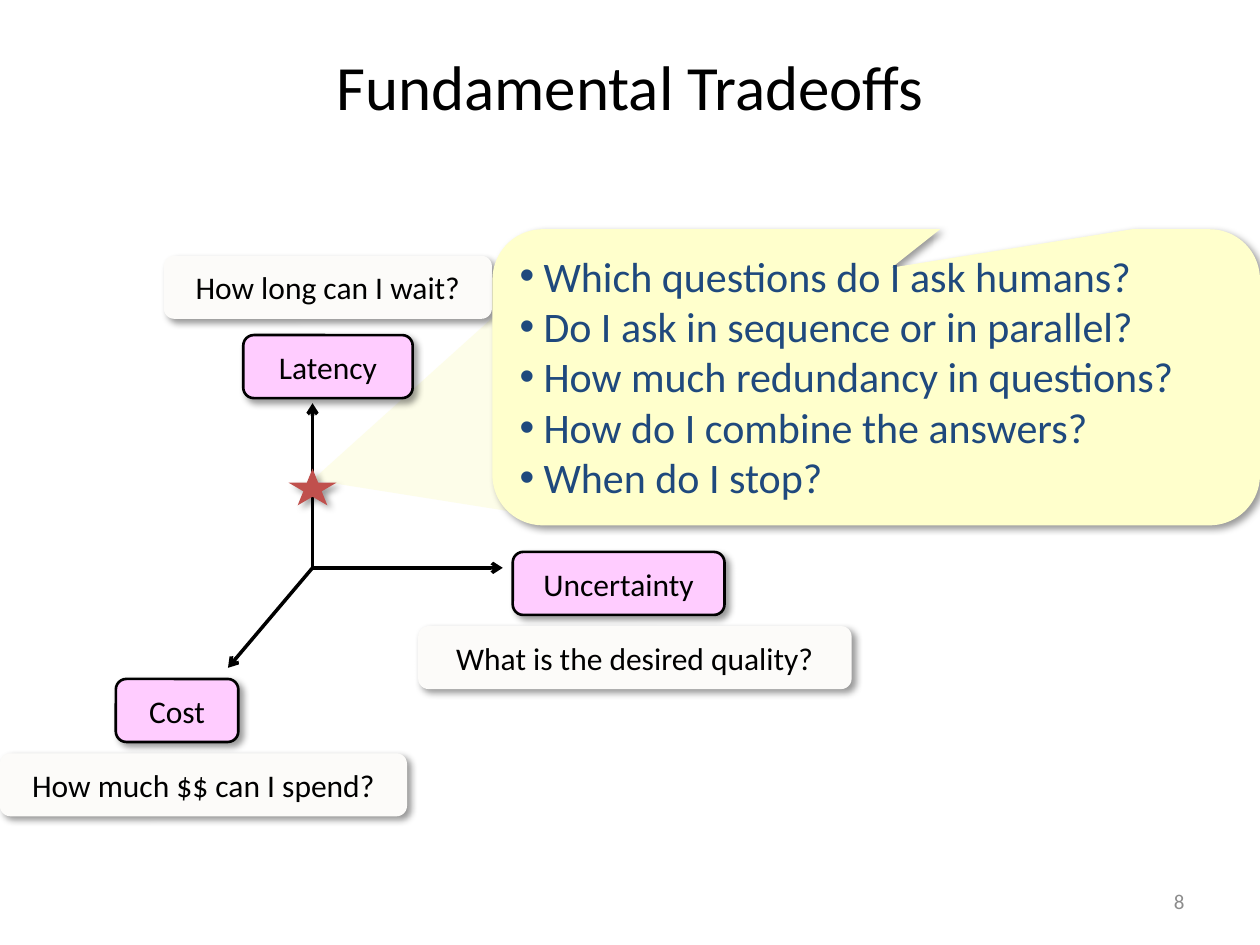
from dataclasses import dataclass
from typing import Optional

from lxml.etree import SubElement
from pptx import Presentation
from pptx.dml.color import RGBColor
from pptx.enum.shapes import MSO_CONNECTOR as Line, MSO_SHAPE as Shape
from pptx.enum.text import MSO_ANCHOR as Anchor, PP_ALIGN as Align
from pptx.oxml.ns import qn
from pptx.util import Pt


@dataclass(frozen=True)
class Theme:
    font: str = "Calibri"
    black: str = "000000"
    axis_name: str = "FFCCFF"
    question: str = "FCFBF9"
    star: str = "C0504D"
    callout: str = "FFFFCC"
    callout_text: str = "1F497D"
    beam: str = "FBFBD1"
    page_number: str = "8C8C8C"
    title_size: float = 36
    list_size: float = 24
    label_size: float = 18
    number_size: float = 12


@dataclass(frozen=True)
class Box:
    left: float
    top: float
    width: float
    height: float

    def lengths(self) -> tuple:
        return Pt(self.left), Pt(self.top), Pt(self.width), Pt(self.height)


@dataclass(frozen=True)
class Axis:
    name: str
    name_box: Box
    question: str
    question_box: Box
    tip: tuple[float, float]


THEME = Theme()
LABEL_HEIGHT = 36
ORIGIN = (178.6, 324.5)
AXES = [
    Axis("Latency", Box(139, 191.5, 96.8, LABEL_HEIGHT),
         "How long can I wait?", Box(93.6, 146.2, 187.5, LABEL_HEIGHT), (178.6, 230.4)),
    Axis("Cost", Box(66.2, 388, 70, LABEL_HEIGHT),
         "How much $$ can I spend?", Box(0, 430.5, 232.6, LABEL_HEIGHT), (130.3, 381.6)),
    Axis("Uncertainty", Box(293, 315.4, 121, LABEL_HEIGHT),
         "What is the desired quality?", Box(239, 357.8, 247.7, LABEL_HEIGHT), (287.3, 324.5)),
]
DECISIONS = [
    "Which questions do I ask humans?",
    "Do I ask in sequence or in parallel?",
    "How much redundancy in questions?",
    "How do I combine the answers?",
    "When do I stop?",
]


def write(frame, text: str, *, size: float, color: str = THEME.black,
          align: Align = Align.CENTER, anchor: Anchor = Anchor.MIDDLE,
          bullet_indent: float = 0) -> None:
    """Fill a text frame, one paragraph a line, bulleted if an indent is given."""
    frame.word_wrap = True
    frame.vertical_anchor = anchor
    for index, line in enumerate(text.split("\n")):
        para = frame.add_paragraph() if index else frame.paragraphs[0]
        para.alignment = align
        span = para.add_run()
        span.text = line
        span.font.name = THEME.font
        span.font.size = Pt(size)
        span.font.color.rgb = RGBColor.from_string(color)
        if bullet_indent:
            properties = para._p.get_or_add_pPr()
            properties.set("marL", str(Pt(bullet_indent)))
            properties.set("indent", str(-Pt(bullet_indent)))
            SubElement(properties, qn("a:buFont"), typeface="Arial")
            SubElement(properties, qn("a:buChar"), char="•")


def add_shadow(shape) -> None:
    effects = shape._element.spPr.find(qn("a:effectLst"))
    shadow = SubElement(effects, qn("a:outerShdw"), blurRad=str(Pt(4)), dist=str(Pt(3)),
                        dir=str(45 * 60000), algn="tl", rotWithShape="0")
    color = SubElement(shadow, qn("a:srgbClr"), val=THEME.black)
    SubElement(color, qn("a:alpha"), val="40000")


def add_shape(slide, kind: Shape, box: Box, fill: str, *, outline: Optional[float] = None,
              shadow: bool = True, adjustments: tuple = ()):
    shape = slide.shapes.add_shape(kind, *box.lengths())
    for index, value in enumerate(adjustments):
        shape.adjustments[index] = value
    shape.fill.solid()
    shape.fill.fore_color.rgb = RGBColor.from_string(fill)
    if outline:
        shape.line.color.rgb = RGBColor.from_string(THEME.black)
        shape.line.width = Pt(outline)
    else:
        shape.line.fill.background()
    shape.shadow.inherit = False
    if shadow:
        add_shadow(shape)
    return shape


def add_label(slide, text: str, box: Box, fill: str, outline: Optional[float] = None) -> None:
    label = add_shape(slide, Shape.ROUNDED_RECTANGLE, box, fill, outline=outline)
    write(label.text_frame, text, size=THEME.label_size)


def add_arrow(slide, start: tuple[float, float], end: tuple[float, float]) -> None:
    arrow = slide.shapes.add_connector(Line.STRAIGHT, *map(Pt, start + end))
    arrow.line.color.rgb = RGBColor.from_string(THEME.black)
    arrow.line.width = Pt(2)
    properties = arrow._element.spPr
    SubElement(properties.find(qn("a:ln")), qn("a:tailEnd"), type="arrow")
    SubElement(properties, qn("a:effectLst"))


def add_beam(slide) -> None:
    """Draw the translucent triangle that joins the star to the callout."""
    beam = add_shape(slide, Shape.ISOSCELES_TRIANGLE, Box(174.2, 147.6, 154.1, 145.4),
                     THEME.beam, shadow=False, adjustments=(0.15,))
    beam.rotation = 270
    color = beam._element.spPr.find(qn("a:solidFill")).find(qn("a:srgbClr"))
    SubElement(color, qn("a:alpha"), val="47000")


def main() -> None:
    deck = Presentation()
    deck.slide_width, deck.slide_height = Pt(720), Pt(540)
    slide = deck.slides.add_slide(deck.slide_layouts[5])

    title = slide.shapes.title
    title.left, title.top, title.width, title.height = Box(36, 10.8, 648, 75.6).lengths()
    write(title.text_frame, "Fundamental Tradeoffs", size=THEME.title_size)

    add_beam(slide)
    number = slide.shapes.add_textbox(*Box(516.2, 500.5, 167.8, 28.8).lengths())
    write(number.text_frame, "8", size=THEME.number_size, color=THEME.page_number,
          align=Align.RIGHT)

    for axis in AXES:
        add_arrow(slide, ORIGIN, axis.tip)
    for axis in AXES:
        add_label(slide, axis.name, axis.name_box, THEME.axis_name, outline=1.5)
    add_shape(slide, Shape.STAR_5_POINT, Box(164.9, 267.8, 27.4, 21), THEME.star)
    for axis in AXES:
        add_label(slide, axis.question, axis.question_box, THEME.question)

    callout = add_shape(slide, Shape.ROUNDED_RECTANGULAR_CALLOUT, Box(281.4, 131, 438.6, 169.2),
                        THEME.callout, adjustments=(0.02, -0.37, 0.17))
    write(callout.text_frame, "\n".join(DECISIONS), size=THEME.list_size,
          color=THEME.callout_text, align=Align.LEFT, anchor=Anchor.TOP, bullet_indent=13.7)

    deck.save("out.pptx")


if __name__ == "__main__":
    main()
